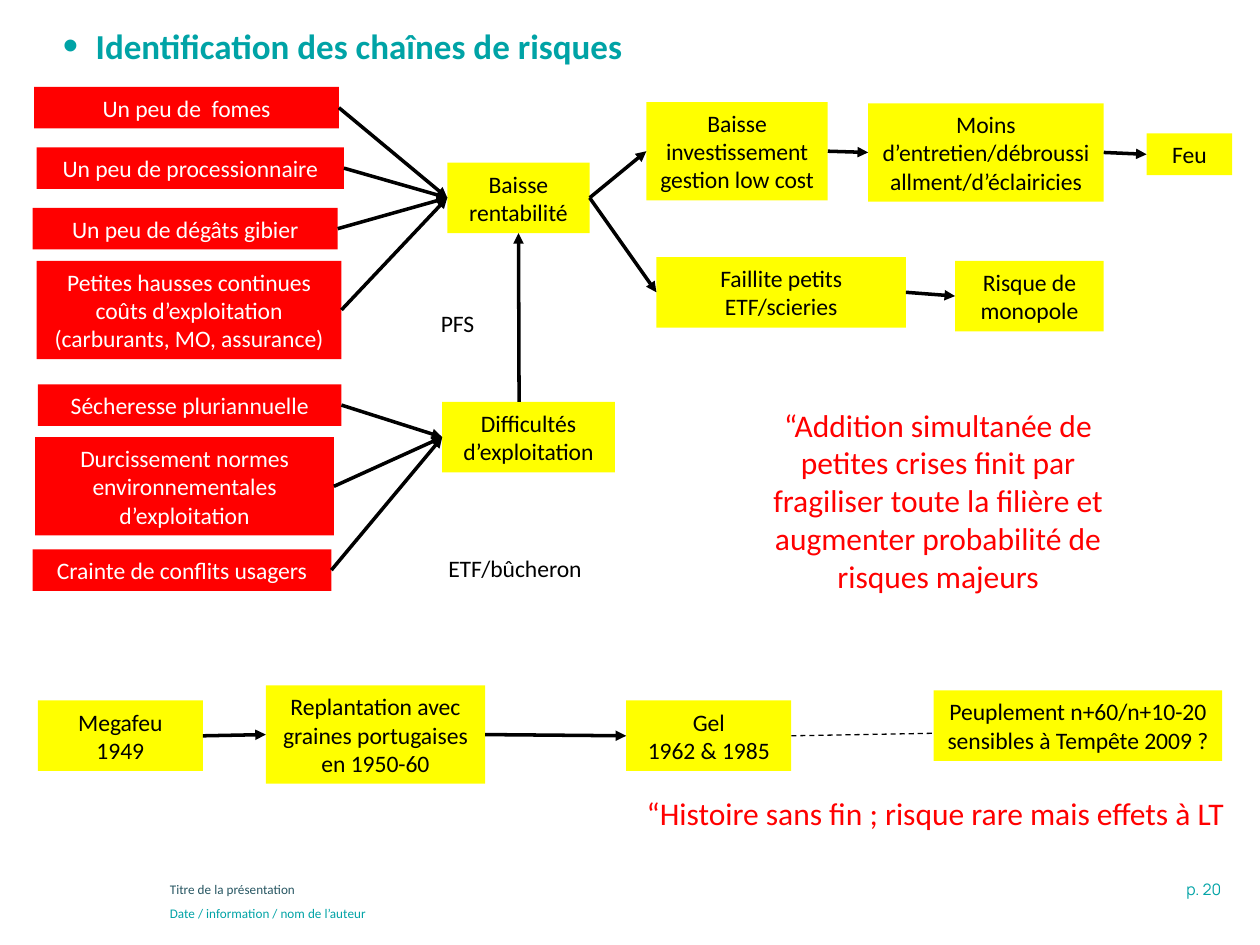
from lxml import etree
from pptx import Presentation
from pptx.dml.color import RGBColor
from pptx.enum.dml import MSO_LINE
from pptx.enum.shapes import MSO_CONNECTOR, MSO_SHAPE
from pptx.enum.text import MSO_ANCHOR, MSO_AUTO_SIZE, PP_ALIGN
from pptx.oxml.ns import qn
from pptx.util import Inches, Pt

TEAL, SLATE = "00A3A6", "275662"
RED, YELLOW, BLACK, WHITE = "FF0000", "FFFF00", "000000", "FFFFFF"
LEFT, BOTTOM, RIGHT = 1, 2, 3


def color(hex_code):
    return RGBColor.from_string(hex_code)


class RiskSlide:
    """Holds the style and the slide being drawn."""
    font = "Calibri"
    label_size = 13.5
    arrow_width = 2

    def __init__(self, slide):
        self.slide = slide

    def add_lines(self, frame, lines, size, ink, align, font=None, bold=None):
        frame.word_wrap = True
        frame.auto_size = MSO_AUTO_SIZE.SHAPE_TO_FIT_TEXT
        for index, line in enumerate(lines):
            paragraph = frame.add_paragraph() if index else frame.paragraphs[0]
            paragraph.alignment = align
            run = paragraph.add_run()
            run.text = line
            run.font.name = font or self.font
            run.font.size = Pt(size)
            run.font.bold = bold
            run.font.color.rgb = color(ink)

    def box(self, place, fill, ink, *lines):
        box = self.slide.shapes.add_shape(MSO_SHAPE.RECTANGLE, *map(Inches, place))
        box.shadow.inherit = False
        box.fill.solid()
        box.fill.fore_color.rgb = color(fill)
        box.line.fill.background()
        self.add_lines(box.text_frame, lines, self.label_size, ink, PP_ALIGN.CENTER)
        return box

    def cause(self, place, *lines):
        return self.box(place, RED, WHITE, *lines)

    def effect(self, place, *lines):
        return self.box(place, YELLOW, BLACK, *lines)

    def text(self, place, line, size=label_size, ink=BLACK, align=PP_ALIGN.LEFT,
             font=None, bold=None):
        frame = self.slide.shapes.add_textbox(*map(Inches, place)).text_frame
        self.add_lines(frame, [line], size, ink, align, font, bold)
        return frame

    def heading(self, place, line):
        frame = self.text(place, line, 20, TEAL, bold=True)
        frame.vertical_anchor = MSO_ANCHOR.MIDDLE
        frame.margin_left, frame.margin_right = 0, Inches(0.05)
        frame.margin_top = frame.margin_bottom = Inches(0.03)
        paragraph = frame.paragraphs[0]
        paragraph.line_spacing = 0.9
        props = paragraph._p.get_or_add_pPr()
        props.set("marL", str(Inches(0.26)))
        props.set("indent", str(Inches(-0.26)))
        etree.SubElement(props, qn("a:buSzPct")).set("val", "125000")
        etree.SubElement(props, qn("a:buFont")).set("typeface", "Arial")
        etree.SubElement(props, qn("a:buChar")).set("char", "•")

    def link(self, start, end, width=arrow_width, dashed=False):
        """Each end is a (box, side) pair or an (x, y) point in inches."""
        link = self.slide.shapes.add_connector(MSO_CONNECTOR.STRAIGHT, 0, 0, 0, 0)
        if isinstance(start[0], float):
            link.begin_x, link.begin_y = map(Inches, start)
        else:
            link.begin_connect(*start)
        if isinstance(end[0], float):
            link.end_x, link.end_y = map(Inches, end)
        else:
            link.end_connect(*end)
        link.line.color.rgb = color(BLACK)
        link.line.width = Pt(width)
        props = link._element.spPr
        if dashed:
            link.line.dash_style = MSO_LINE.DASH
        else:
            etree.SubElement(props.find(qn("a:ln")), qn("a:tailEnd")).set("type", "triangle")
        etree.SubElement(props, qn("a:effectLst"))

    def flow(self, source, target):
        self.link((source, RIGHT), (target, LEFT))


def main():
    deck = Presentation()
    deck.slide_width, deck.slide_height = Inches(10), Inches(7.5)
    page = RiskSlide(deck.slides.add_slide(deck.slide_layouts[6]))

    page.text((7.51, 6.93, 2.28, 0.25), "p. 20", 9, TEAL, PP_ALIGN.RIGHT, "Manrope")
    page.text((1.25, 6.95, 7.34, 0.23), "Titre de la présentation", 7.5, SLATE)
    page.text((1.25, 7.14, 7.34, 0.23), "Date / information / nom de l’auteur", 7.5, TEAL)
    page.heading((0.5, 0.2, 8.37, 0.36), "Identification des chaînes de risques")

    profit_causes = [
        page.cause((0.27, 0.69, 2.42, 0.33), "Un peu de  fomes"),
        page.cause((0.29, 1.17, 2.44, 0.33), "Un peu de processionnaire"),
        page.cause((0.26, 1.65, 2.42, 0.33), "Un peu de dégâts gibier"),
        page.cause((0.29, 2.07, 2.42, 0.78),
                   "Petites hausses continues coûts d’exploitation (carburants, MO, assurance)"),
    ]
    harvest_causes = [
        page.cause((0.3, 3.05, 2.41, 0.33), "Sécheresse pluriannuelle"),
        page.cause((0.28, 3.47, 2.37, 0.78),
                   "Durcissement normes environnementales d’exploitation"),
        page.cause((0.26, 4.36, 2.37, 0.33), "Crainte de conflits usagers"),
    ]
    profit = page.effect((3.55, 1.29, 1.13, 0.56), "Baisse rentabilité")
    harvest = page.effect((3.51, 3.19, 1.37, 0.56), "Difficultés d’exploitation")
    investment = page.effect((5.13, 0.81, 1.44, 0.78), "Baisse investissement gestion low cost")
    upkeep = page.effect((6.89, 0.82, 1.87, 0.78),
                         "Moins d’entretien/débroussiallment/d’éclairicies")
    fire = page.effect((9.1, 1.06, 0.68, 0.33), "Feu")
    bankruptcy = page.effect((5.21, 2.04, 1.98, 0.56), "Faillite petits ETF/scieries")
    monopoly = page.effect((7.58, 2.07, 1.18, 0.56), "Risque de monopole")

    megafire = page.effect((0.3, 5.56, 1.31, 0.56), "Megafeu", "1949")
    replanting = page.effect((2.11, 5.44, 1.74, 0.78),
                             "Replantation avec graines portugaises en 1950-60")
    frost = page.effect((4.97, 5.56, 1.31, 0.56), "Gel", "1962 & 1985")
    page.effect((7.41, 5.48, 2.29, 0.56), "Peuplement n+60/n+10-20 sensibles à Tempête 2009 ?")

    for cause in profit_causes:
        page.flow(cause, profit)
    for cause in harvest_causes:
        page.flow(cause, harvest)
    for chain in ((profit, investment, upkeep, fire),
                  (profit, bankruptcy, monopoly),
                  (megafire, replanting, frost)):
        for source, target in zip(chain, chain[1:]):
            page.flow(source, target)
    page.link((4.12, 3.19), (profit, BOTTOM))
    page.link((frost, RIGHT), (7.41, 5.82), width=0.75, dashed=True)

    page.text((3.4, 2.4, 0.67, 0.33), "PFS")
    page.text((3.46, 4.35, 1.33, 0.56), "ETF/bûcheron")
    page.text((5.87, 3.17, 3.15, 1.62),
              "“Addition simultanée de petites crises finit par fragiliser toute la filière "
              "et augmenter probabilité de risques majeurs", 18, RED, PP_ALIGN.CENTER)
    page.text((4.97, 6.25, 4.91, 0.4),
              "“Histoire sans fin ; risque rare mais effets à LT", 18, RED, PP_ALIGN.CENTER)

    deck.save("out.pptx")


if __name__ == "__main__":
    main()
